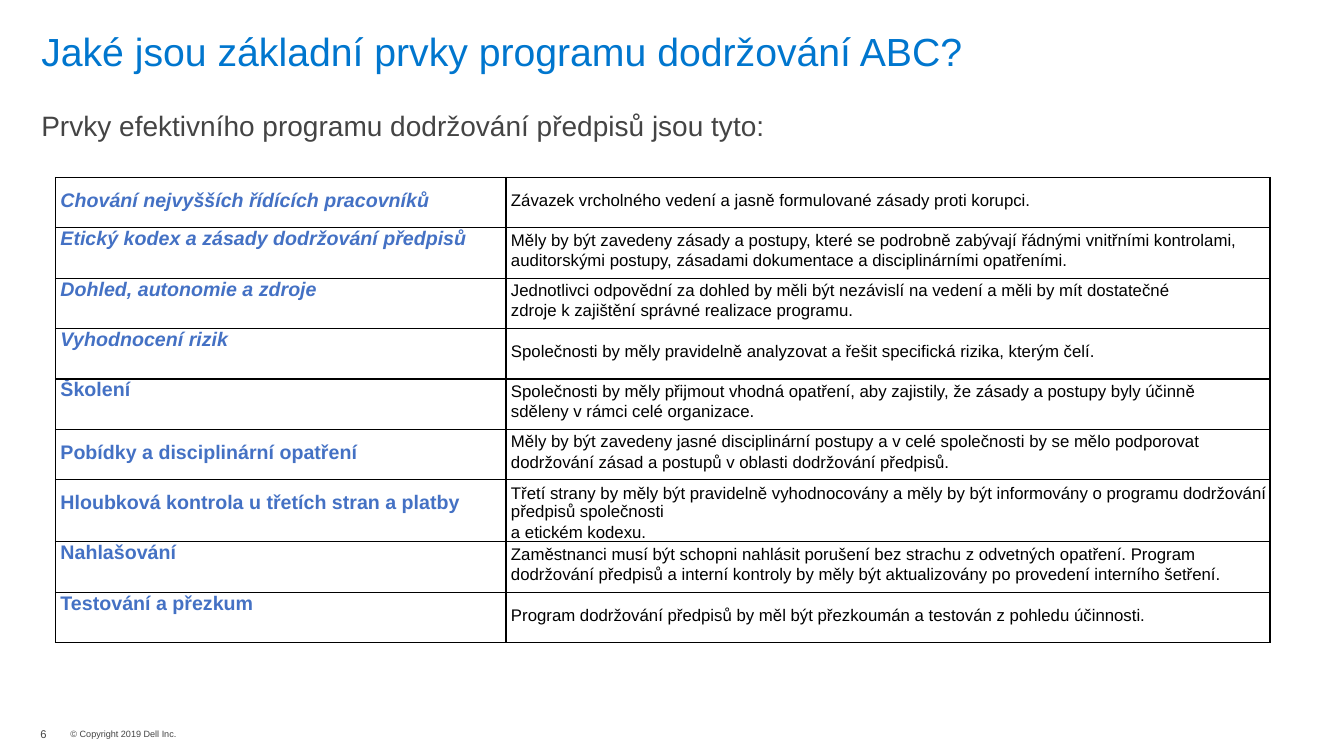
from dataclasses import dataclass

from lxml import etree
from pptx import Presentation
from pptx import util as u
from pptx.dml.color import RGBColor
from pptx.enum import text
from pptx.oxml.ns import qn


@dataclass(frozen=True)
class Theme:
    font: str = "Arial"
    title_color: str = "0076CE"
    body_color: str = "444444"
    element_color: str = "4471C4"
    detail_color: str = "000000"
    border_color: str = "000000"
    title_size: float = 28
    subtitle_size: float = 20
    element_size: float = 14
    detail_size: float = 12
    number_size: float = 8
    copyright_size: float = 6.5
    border_width: float = 1


THEME = Theme()
SLIDE_WIDTH, SLIDE_HEIGHT = u.Inches(13.33), u.Inches(7.5)
GRID_COLUMNS, GRID_ROWS = 40, 30
TABLE_LEFT, TABLE_TOP = 1.65, 7.04
TABLE_COLUMNS = (13.41, 22.74)
TABLE_ROW = 2
CELL_INDENT = 0.15
TOP, MIDDLE, TWO_LINES, THREE_LINES = 0, 0.48, 0.08, 0.16
ONE_LINE = 0.56
NARROW = 1.8

ELEMENTS = [
    ("Chování nejvyšších řídících pracovníků", True, MIDDLE,
     ["Závazek vrcholného vedení a jasně formulované zásady proti korupci."], ONE_LINE, 0),
    ("Etický kodex a zásady dodržování předpisů", True, TOP,
     ["Měly by být zavedeny zásady a postupy, které se podrobně zabývají řádnými vnitřními "
      "kontrolami, auditorskými postupy, zásadami dokumentace a disciplinárními opatřeními."],
     TWO_LINES, 0),
    ("Dohled, autonomie a zdroje", True, TOP,
     ["Jednotlivci odpovědní za dohled by měli být nezávislí na vedení a měli by mít "
      "dostatečné zdroje k zajištění správné realizace programu."], TWO_LINES, NARROW),
    ("Vyhodnocení rizik", True, TOP,
     ["Společnosti by měly pravidelně analyzovat a řešit specifická rizika, kterým čelí."],
     ONE_LINE, 0),
    ("Školení", False, TOP,
     ["Společnosti by měly přijmout vhodná opatření, aby zajistily, že zásady a postupy byly "
      "účinně sděleny v rámci celé organizace."], TWO_LINES, NARROW),
    ("Pobídky a disciplinární opatření", False, MIDDLE,
     ["Měly by být zavedeny jasné disciplinární postupy a v celé společnosti by se mělo "
      "podporovat dodržování zásad a postupů v oblasti dodržování předpisů."], TWO_LINES, 0),
    ("Hloubková kontrola u třetích stran a platby", False, MIDDLE,
     ["Třetí strany by měly být pravidelně vyhodnocovány a měly by být informovány o programu "
      "dodržování předpisů společnosti", "a etickém kodexu."], THREE_LINES, 0),
    ("Nahlašování", False, TOP,
     ["Zaměstnanci musí být schopni nahlásit porušení bez strachu z odvetných opatření. "
      "Program dodržování předpisů a interní kontroly by měly být aktualizovány po provedení "
      "interního šetření."], TWO_LINES, 0),
    ("Testování a přezkum", False, TOP,
     ["Program dodržování předpisů by měl být přezkoumán a testován z pohledu účinnosti."],
     ONE_LINE, 0),
]


def across(columns):
    return round(SLIDE_WIDTH * columns / GRID_COLUMNS)


def down(rows):
    return round(SLIDE_HEIGHT * rows / GRID_ROWS)


def set_font(paragraph, size, color, bold=False, italic=False):
    font = paragraph.font
    font.name, font.size = THEME.font, u.Pt(size)
    font.bold, font.italic = bold, italic
    font.color.rgb = RGBColor.from_string(color)


def fill_box(shape, place, wording, size, color, indent=0.03):
    left, top, width, height = place
    shape.left, shape.top = across(left), down(top)
    shape.width, shape.height = across(width), down(height)
    frame = shape.text_frame
    frame.word_wrap = True
    frame.auto_size = text.MSO_AUTO_SIZE.NONE
    frame.vertical_anchor = text.MSO_ANCHOR.TOP
    frame.margin_left, frame.margin_top = across(indent), down(0.04)
    frame.margin_right = frame.margin_bottom = 0
    frame.text = wording
    paragraph = frame.paragraphs[0]
    paragraph.alignment = text.PP_ALIGN.LEFT
    set_font(paragraph, size, color)


def add_label(slide, *content, **options):
    fill_box(slide.shapes.add_textbox(0, 0, 0, 0), *content, **options)


def draw_borders(cell):
    properties = cell._tc.get_or_add_tcPr()
    for position, side in enumerate(("a:lnL", "a:lnR", "a:lnT", "a:lnB")):
        line = etree.Element(qn(side), w=str(u.Pt(THEME.border_width)))
        solid = etree.SubElement(line, qn("a:solidFill"))
        etree.SubElement(solid, qn("a:srgbClr"), val=THEME.border_color)
        properties.insert(position, line)


def fill_cell(cell, paragraphs, top, size, color, right=0, bold=False, italic=False):
    cell.margin_left, cell.margin_right = across(CELL_INDENT), across(right)
    cell.margin_top, cell.margin_bottom = down(top), 0
    cell.vertical_anchor = text.MSO_ANCHOR.TOP
    cell.text = "\n".join(paragraphs)
    for position, paragraph in enumerate(cell.text_frame.paragraphs):
        set_font(paragraph, size, color, bold, italic)
        if position:
            paragraph.space_before = u.Pt(1.1)
        if top == TWO_LINES:
            paragraph.line_spacing = 1.07
    cell.fill.background()
    draw_borders(cell)


def add_elements_table(slide):
    table = slide.shapes.add_table(
        len(ELEMENTS), len(TABLE_COLUMNS), across(TABLE_LEFT), down(TABLE_TOP),
        across(sum(TABLE_COLUMNS)), down(TABLE_ROW * len(ELEMENTS))).table
    table.first_row = table.horz_banding = False
    for column, width in zip(table.columns, TABLE_COLUMNS):
        column.width = across(width)
    for index, (element, italic, element_top, details, detail_top, right) in enumerate(ELEMENTS):
        table.rows[index].height = down(TABLE_ROW)
        fill_cell(table.cell(index, 0), [element], element_top, THEME.element_size,
                  THEME.element_color, bold=True, italic=italic)
        fill_cell(table.cell(index, 1), details, detail_top, THEME.detail_size,
                  THEME.detail_color, right=right)


def main():
    presentation = Presentation()
    presentation.slide_width, presentation.slide_height = SLIDE_WIDTH, SLIDE_HEIGHT
    slide = presentation.slides.add_slide(presentation.slide_layouts[5])
    fill_box(slide.shapes.title, (1.2, 1.04, 32, 2),
             "Jaké jsou základní prvky programu dodržování ABC?",
             THEME.title_size, THEME.title_color)
    add_label(slide, (1.2, 4.28, 22.56, 1.4),
              "Prvky efektivního programu dodržování předpisů jsou tyto:",
              THEME.subtitle_size, THEME.body_color)
    add_elements_table(slide)
    add_label(slide, (1.08, 28.84, 0.66, 0.6), "6",
              THEME.number_size, THEME.body_color, indent=0.12)
    add_label(slide, (2.07, 28.88, 3.36, 0.52), "© Copyright 2019 Dell Inc.",
              THEME.copyright_size, THEME.body_color)
    presentation.save("out.pptx")


if __name__ == "__main__":
    main()
